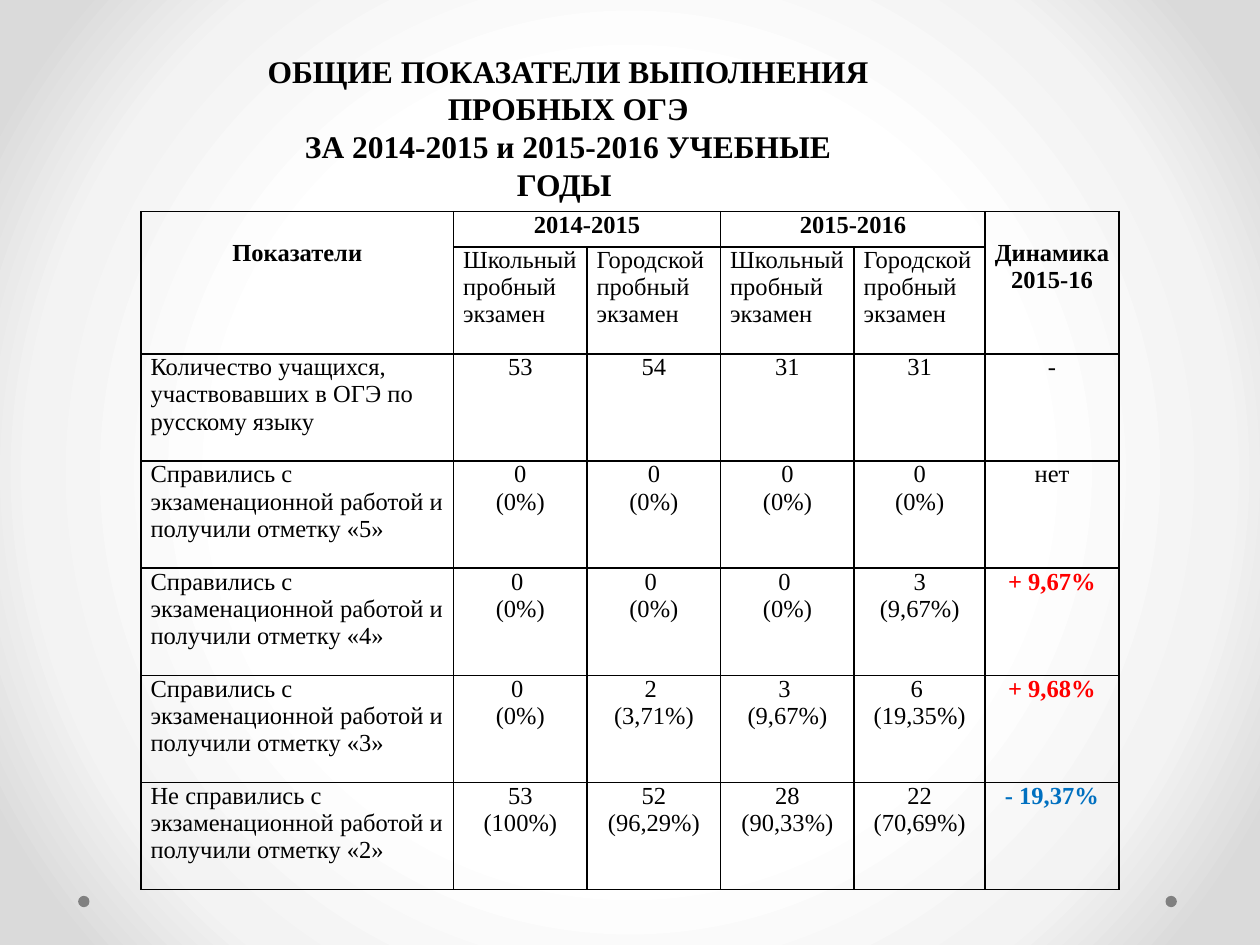
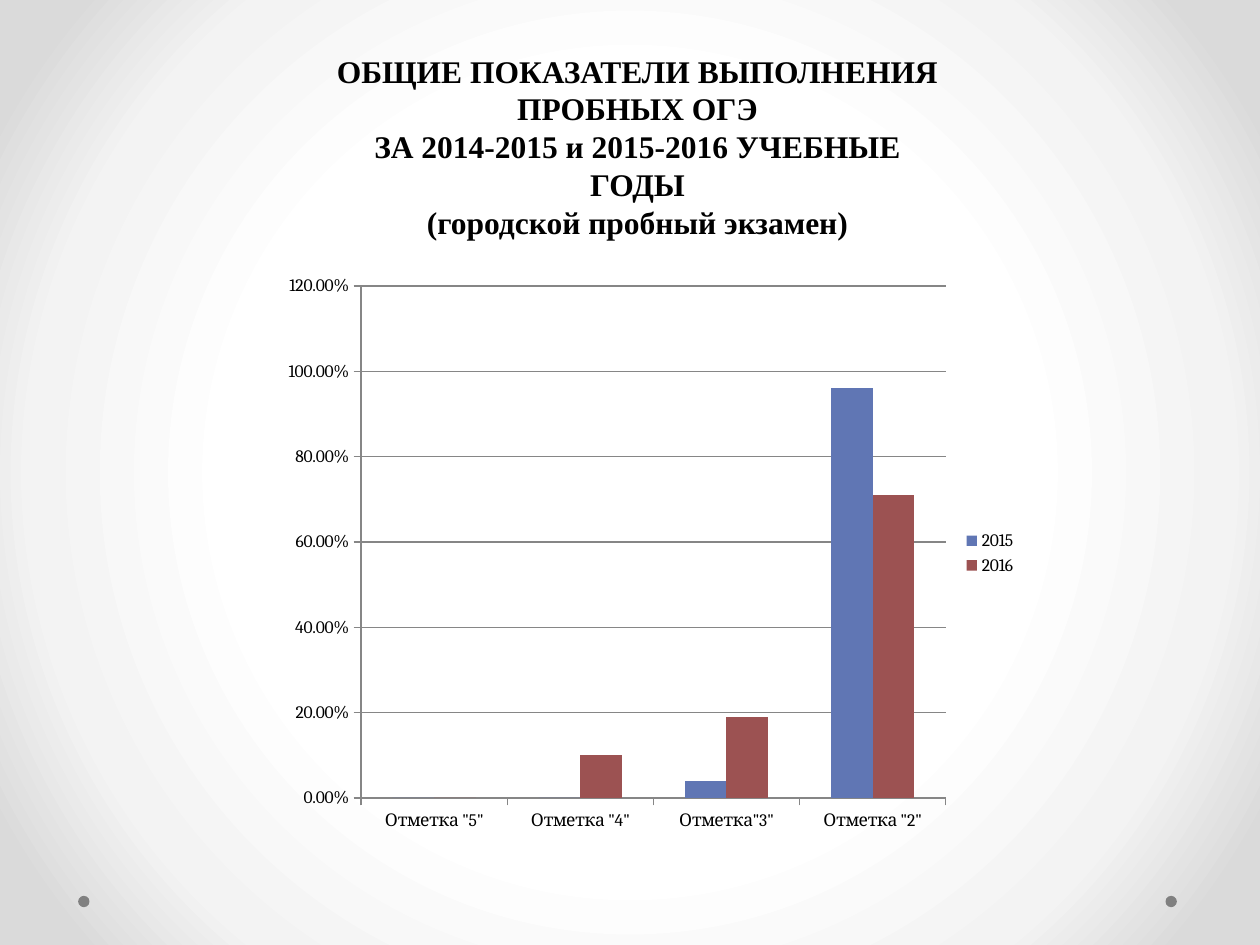
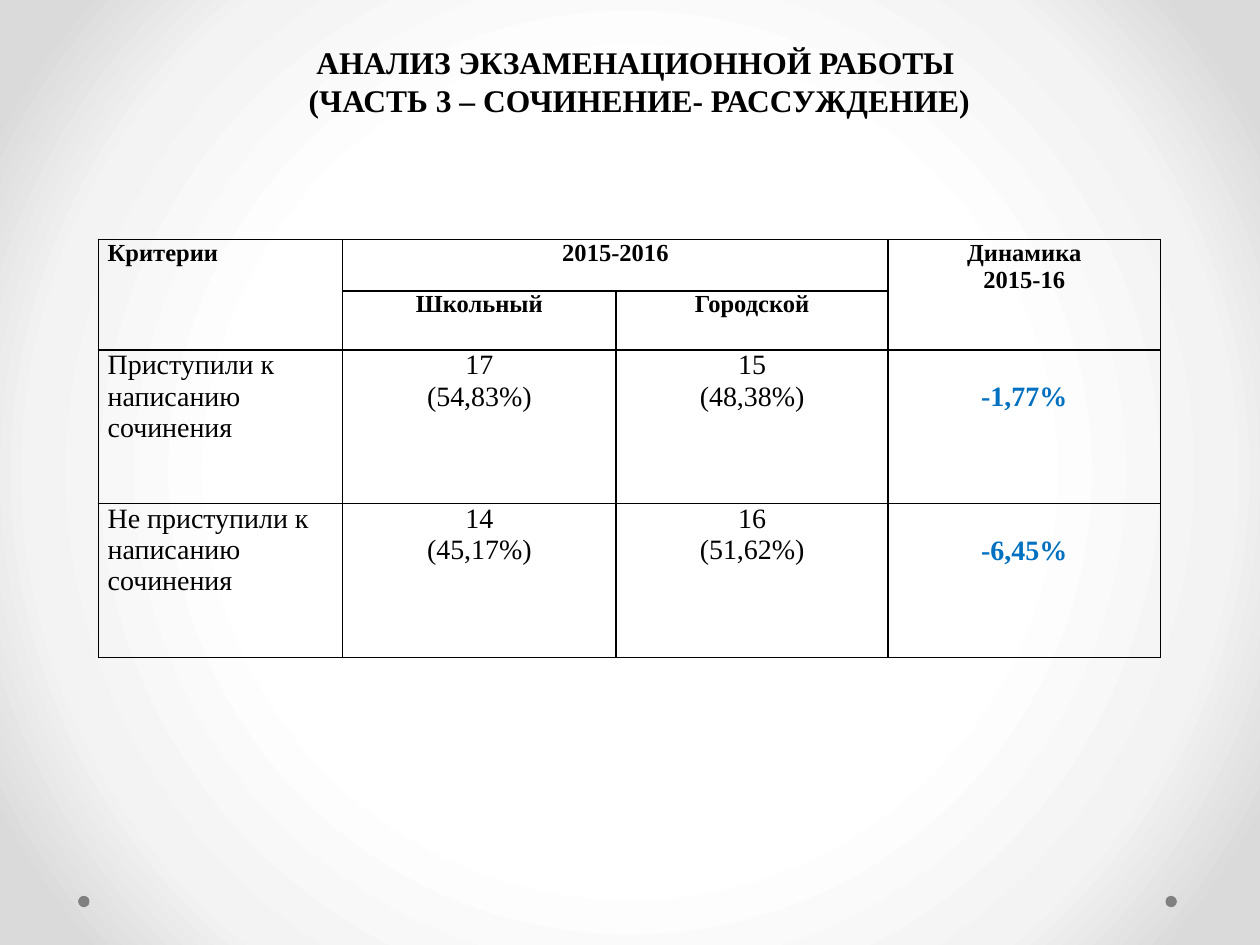
from dataclasses import dataclass

from pptx import Presentation
from pptx.chart.data import CategoryChartData
from pptx.dml.color import RGBColor
from pptx.enum.chart import XL_CHART_TYPE as ChartType, XL_LEGEND_POSITION as LegendSpot
from pptx.enum.chart import XL_TICK_MARK as TickMark
from pptx.enum.shapes import MSO_SHAPE as Shape
from pptx.enum.text import MSO_ANCHOR as Anchor, MSO_AUTO_SIZE as AutoSize, PP_ALIGN as Align
from pptx.oxml import parse_xml
from pptx.oxml.ns import nsdecls
from pptx.util import Inches, Pt


@dataclass(frozen=True)
class Theme:
    ink: str = "000000"
    rise: str = "FF0000"
    fall: str = "0070C0"
    dot: str = "808080"
    axis: str = "868686"
    series: tuple = ("6076B4", "9C5252")
    backdrop: tuple = ((50, "FFFFFF"), (76, "F3F3F3"), (92, "DADADA"))
    font: str = "Times New Roman"
    chart_font: str = "Cambria"
    title_size: int = 18
    table_size: int = 14
    large_size: int = 16
    chart_size: int = 10


THEME = Theme()


@dataclass
class Cell:
    text: str
    bold: bool = False
    color: str = THEME.ink
    align: Align = Align.CENTER
    size: int = THEME.table_size
    top: float = 0


def head(text, **style):
    return Cell(text, bold=True, **style)


def label(text, **style):
    return Cell(text, align=Align.LEFT, **style)


# Content
YEARS_TITLE = ["ОБЩИЕ ПОКАЗАТЕЛИ ВЫПОЛНЕНИЯ ПРОБНЫХ ОГЭ",
               "ЗА 2014-2015 и 2015-2016 УЧЕБНЫЕ ГОДЫ"]
ESSAY_TITLE = ["АНАЛИЗ ЭКЗАМЕНАЦИОННОЙ РАБОТЫ ",
               "(ЧАСТЬ 3 – СОЧИНЕНИЕ- РАССУЖДЕНИЕ)"]

EXAMS = ["Школьный\nпробный экзамен", "Городской пробный экзамен"] * 2
RESULTS = [
    ("Количество учащихся, участвовавших в ОГЭ по русскому языку",
     ["53", "54", "31", "31"], Cell("-")),
    ("Справились с экзаменационной работой и получили отметку «5»",
     ["0\n(0%)"] * 4, Cell("нет")),
    ("Справились с экзаменационной работой и получили отметку «4»",
     ["0 \n(0%)"] * 3 + ["3\n(9,67%)"], head("+ 9,67%", color=THEME.rise)),
    ("Справились с экзаменационной работой и получили отметку «3»",
     ["0 \n(0%)", "2 \n(3,71%)", "3 \n(9,67%)", "6 \n(19,35%)"],
     head("+ 9,68%", color=THEME.rise)),
    ("Не справились с экзаменационной работой и получили отметку «2»",
     ["53\n(100%)", "52\n(96,29%)", "28\n(90,33%)", "22\n(70,69%)"],
     head("- 19,37%", color=THEME.fall)),
]
RESULT_ROWS = [
    [head("Показатели", top=0.22), head("2014-2015"), None, head("2015-2016"), None,
     head("Динамика\n2015-16", top=0.22)],
    [None, *map(label, EXAMS), None],
    *([label(name), *map(Cell, counts), change] for name, counts, change in RESULTS),
]

ESSAYS = [
    ("Приступили к написанию сочинения", ["17\n(54,83%)", "15\n(48,38%)"], "-1,77%"),
    ("Не приступили к написанию сочинения", ["14\n(45,17%)", "16\n(51,62%)"], "-6,45%"),
]
LARGE = {"size": THEME.large_size}
ESSAY_ROWS = [
    [head("Критерии", align=Align.LEFT), head("2015-2016"), None, head("Динамика\n2015-16")],
    [None, head("Школьный"), head("Городской"), None],
    *([label(name, **LARGE), *(Cell(count, **LARGE) for count in counts),
       head(change, color=THEME.fall, top=0.25, **LARGE)]
      for name, counts, change in ESSAYS),
]

MARKS = ['Отметка "5"', 'Отметка "4"', 'Отметка"3"', 'Отметка "2"']
SHARES = {"2015": (0, 0, 0.04, 0.96), "2016": (0, 0.1, 0.19, 0.71)}


# Shared parts
def rgb(code):
    return RGBColor.from_string(code)


def add_text(frame, lines, size, color, bold, align):
    for index, line in enumerate(lines):
        para = frame.add_paragraph() if index else frame.paragraphs[0]
        para.alignment = align
        span = para.add_run()
        span.text = line
        font = span.font
        font.name, font.size, font.bold = THEME.font, Pt(size), bold
        font.color.rgb = rgb(color)


def add_backdrop(layout):
    stops = "".join(f'<a:gs pos="{spot * 1000}"><a:srgbClr val="{color}"/></a:gs>'
                    for spot, color in THEME.backdrop)
    layout.element.cSld.insert(0, parse_xml(
        f'<p:bg {nsdecls("p", "a")}><p:bgPr><a:gradFill rotWithShape="1">'
        f'<a:gsLst>{stops}</a:gsLst><a:path path="circle">'
        '<a:fillToRect l="50000" t="50000" r="50000" b="50000"/></a:path>'
        '</a:gradFill><a:effectLst/></p:bgPr></p:bg>'))


def add_dots(page, layout):
    """Draw the corner dots and hand them to the shared layout."""
    for left in (9.25, 0.62):
        dot = page.shapes.add_shape(Shape.OVAL, Inches(left), Inches(7.11),
                                    Inches(0.09), Inches(0.09))
        dot.shadow.inherit = False
        dot.fill.solid()
        dot.fill.fore_color.rgb = rgb(THEME.dot)
        dot.line.fill.background()
        layout.shapes.element.append(dot.element)


def add_page(deck, layout, lines, place):
    page = deck.slides.add_slide(layout)
    box = page.shapes.title
    box.left, box.top, box.width, box.height = map(Inches, place)
    frame = box.text_frame
    frame.word_wrap = True
    frame.auto_size = AutoSize.SHAPE_TO_FIT_TEXT
    frame.vertical_anchor = Anchor.TOP
    add_text(frame, lines, THEME.title_size, THEME.ink, True, Align.CENTER)
    return page


def add_borders(cell):
    props = cell._tc.get_or_add_tcPr()
    for index, side in enumerate(("lnL", "lnR", "lnT", "lnB")):
        props.insert(index, parse_xml(
            f'<a:{side} {nsdecls("a")} w="{Pt(1)}"><a:solidFill>'
            f'<a:srgbClr val="{THEME.ink}"/></a:solidFill></a:{side}>'))


def add_grid(page, left, top, widths, heights, rows, merges):
    """Each merge is (row, column, last row, last column)."""
    table = page.shapes.add_table(len(heights), len(widths), Inches(left), Inches(top),
                                  Inches(sum(widths)), Inches(sum(heights))).table
    table.first_row = table.horz_banding = False
    for column, width in zip(table.columns, widths):
        column.width = Inches(width)
    for row, height in zip(table.rows, heights):
        row.height = Inches(height)
    for row, column, last_row, last_column in merges:
        table.cell(row, column).merge(table.cell(last_row, last_column))
    for r, row in enumerate(rows):
        for c, item in enumerate(row):
            cell = table.cell(r, c)
            cell.fill.background()
            add_borders(cell)
            cell.margin_left = cell.margin_right = Pt(5.4)
            cell.margin_top = cell.margin_bottom = 0
            if item:
                cell.margin_top = Inches(item.top)
                add_text(cell.text_frame, item.text.split("\n"), item.size,
                         item.color, item.bold, item.align)


def add_shares_chart(page):
    data = CategoryChartData(number_format="0.00%")
    data.categories = MARKS
    for year, values in SHARES.items():
        data.add_series(year, values)
    chart = page.shapes.add_chart(ChartType.COLUMN_CLUSTERED, Inches(2.17), Inches(2.1),
                                  Inches(6), Inches(4.58), data).chart
    chart.has_title = False
    chart.font.name, chart.font.size = THEME.chart_font, Pt(THEME.chart_size)
    chart.font.color.rgb = rgb(THEME.ink)
    chart.has_legend = True
    chart.legend.position = LegendSpot.RIGHT
    chart.legend.include_in_layout = False

    plot = chart.plots[0]
    plot.gap_width, plot.overlap, plot.vary_by_categories = 150, 0, False
    for series, color in zip(plot.series, THEME.series):
        series.format.fill.solid()
        series.format.fill.fore_color.rgb = rgb(color)

    shares = chart.value_axis
    shares.minimum_scale, shares.maximum_scale, shares.major_unit = 0, 1.2, 0.2
    shares.has_major_gridlines = True
    shares.tick_labels.number_format = "0.00%"
    shares.tick_labels.number_format_is_linked = False
    for axis in (shares, chart.category_axis):
        axis.major_tick_mark = TickMark.OUTSIDE
    for part in (shares, chart.category_axis, shares.major_gridlines):
        part.format.line.color.rgb = rgb(THEME.axis)
        part.format.line.width = Pt(0.75)


# Slides
def main():
    deck = Presentation()
    deck.slide_width, deck.slide_height = Inches(10), Inches(7.5)
    layout = deck.slide_layouts.get_by_name("Title Only")
    add_backdrop(layout)

    results = add_page(deck, layout, [YEARS_TITLE[0], YEARS_TITLE[1] + " "],
                       (2.01, 0.36, 5, 1.31))
    add_dots(results, layout)
    add_grid(results, 1.12, 1.68, [2.48, 1.06, 1.06, 1.06, 1.04, 1.06],
             [0.28] + [0.85] * 6, RESULT_ROWS,
             [(0, 0, 1, 0), (0, 1, 0, 2), (0, 3, 0, 4), (0, 5, 1, 5)])

    shares = add_page(deck, layout, YEARS_TITLE + ["(городской пробный экзамен)"],
                      (2.56, 0.36, 5, 1.62))
    add_shares_chart(shares)

    essays = add_page(deck, layout, ESSAY_TITLE, (1.69, 0.29, 6.77, 1.01))
    add_grid(essays, 0.78, 1.9, [1.94, 2.17, 2.16, 2.16], [0.41, 0.46, 1.22, 1.22],
             ESSAY_ROWS, [(0, 0, 1, 0), (0, 1, 0, 2), (0, 3, 1, 3)])

    deck.save("out.pptx")


if __name__ == "__main__":
    main()
